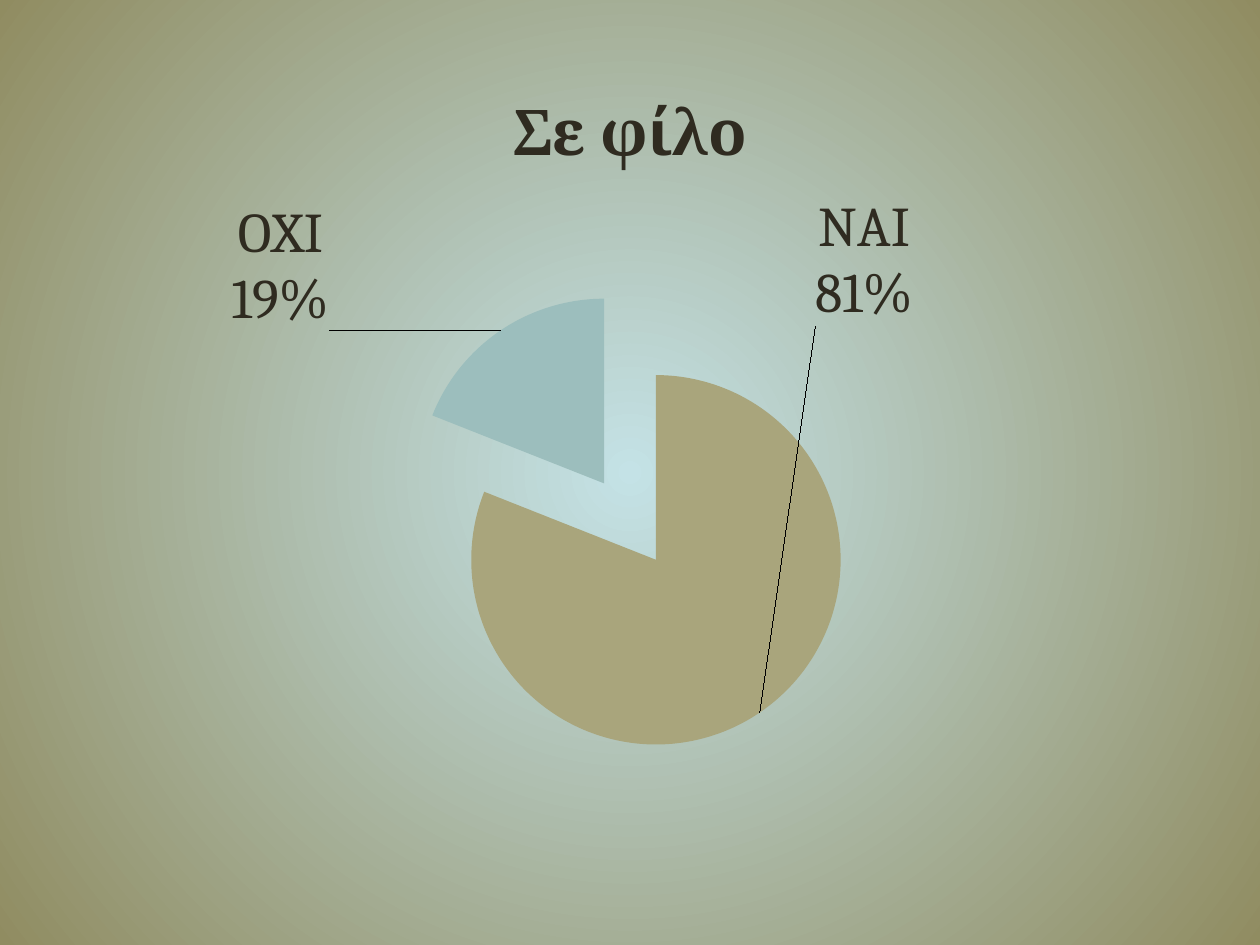
"""Build a slide with one exploded pie chart of shares by answer."""
from copy import deepcopy
from dataclasses import dataclass

from lxml import etree
from pptx import Presentation, util as u
from pptx.chart.data import CategoryChartData
from pptx.dml.color import RGBColor
from pptx.enum import chart as ch
from pptx.oxml import parse_xml
from pptx.oxml.ns import nsdecls, qn

TITLE = "Σε φίλο"
SLICES = [
    {"name": "NAI", "share": 81, "fill": "A9A57C", "shift": (0.04, -0.63)},
    {"name": "OXI", "share": 19, "fill": "9CBEBD", "shift": (-0.13, 0.01)},
]
SIZE = (720, 540)
FRAME = (-6.5, 32.4, 733, 474.5)
PLOT = (0.32, 0.28, 0.36, 0.56)
BURST = 25


@dataclass(frozen=True)
class Theme:
    ink: str = "2F2B20"
    glow: str = "C4E2E6"
    edge: str = "908C61"
    serif: str = "Cambria"
    sans: str = "Roboto"
    title: int = 36
    label: int = 32
    base: int = 10


LOOK = Theme()


def style(font, face, size, bold=False):
    font.name, font.size, font.bold = face, u.Pt(size), bold
    font.color.rgb = RGBColor.from_string(LOOK.ink)


def node(tag, val):
    return parse_xml(f'<c:{tag} {nsdecls("c")} val="{val}"/>')


def layout(spots, inner=False):
    box = parse_xml(f'<c:layout {nsdecls("c")}><c:manualLayout/></c:layout>')
    if inner:
        box[0].append(node("layoutTarget", "inner"))
        box[0].extend([node("xMode", "edge"), node("yMode", "edge")])
    box[0].extend(node(tag, val) for tag, val in zip("xywh", spots))
    return box


def paint(slide):
    fill = slide.background.fill
    fill.gradient()
    for stop, color, pos in zip(fill.gradient_stops, (LOOK.glow, LOOK.edge), (0, 1)):
        stop.color.rgb = RGBColor.from_string(color)
        stop.position = pos
    line = next(slide.background._cSld.iter(qn("a:lin")))
    line.getparent().replace(line, parse_xml(
        f'<a:path {nsdecls("a")} path="circle">'
        '<a:fillToRect l="50000" t="50000" r="50000" b="50000"/></a:path>'))


def label(series):
    tags = series.data_labels
    style(tags.font, LOOK.serif, LOOK.label)
    tags.number_format, tags.number_format_is_linked = "0%", False
    tags.position = ch.XL_LABEL_POSITION.OUTSIDE_END
    tags.show_value = False
    tags.show_category_name = tags.show_percentage = True
    root = series._element.find(qn("c:dLbls"))
    lead = root.find(qn("c:showLeaderLines"))
    if lead is not None:
        root.remove(lead)
    gap = etree.SubElement(root, qn("c:separator"))
    gap.text = "\n"
    parts = list(root)
    for idx, part in enumerate(SLICES):
        tag = parse_xml(f'<c:dLbl {nsdecls("c")}/>')
        tag.extend([node("idx", idx), layout(part["shift"])])
        tag.extend(deepcopy(item) for item in parts)
        root.insert(idx, tag)
    root.append(node("showLeaderLines", 1))


def draw(slide):
    data = CategoryChartData()
    data.categories = [part["name"] for part in SLICES]
    data.add_series("Series 1", [part["share"] for part in SLICES])
    chart = slide.shapes.add_chart(
        ch.XL_CHART_TYPE.PIE, *map(u.Pt, FRAME), data).chart
    style(chart.font, LOOK.sans, LOOK.base)
    chart.has_legend = False
    chart.has_title = True
    head = chart.chart_title.text_frame
    head.text = TITLE
    style(head.paragraphs[0].font, LOOK.serif, LOOK.title, True)
    plot = chart.plots[0]
    plot.vary_by_categories = True
    series = plot.series[0]
    for idx, part in enumerate(SLICES):
        fill = series.points[idx].format.fill
        fill.solid()
        fill.fore_color.rgb = RGBColor.from_string(part["fill"])
    series._element.find(qn("c:dPt")).addprevious(node("explosion", BURST))
    label(series)
    area = chart._chartSpace.chart.plotArea
    for old in area.findall(qn("c:layout")):
        area.remove(old)
    area.insert(0, layout(PLOT, True))


def main():
    deck = Presentation()
    deck.slide_width, deck.slide_height = map(u.Pt, SIZE)
    slide = deck.slides.add_slide(deck.slide_layouts[6])
    paint(slide)
    draw(slide)
    deck.save("out.pptx")


if __name__ == "__main__":
    main()
